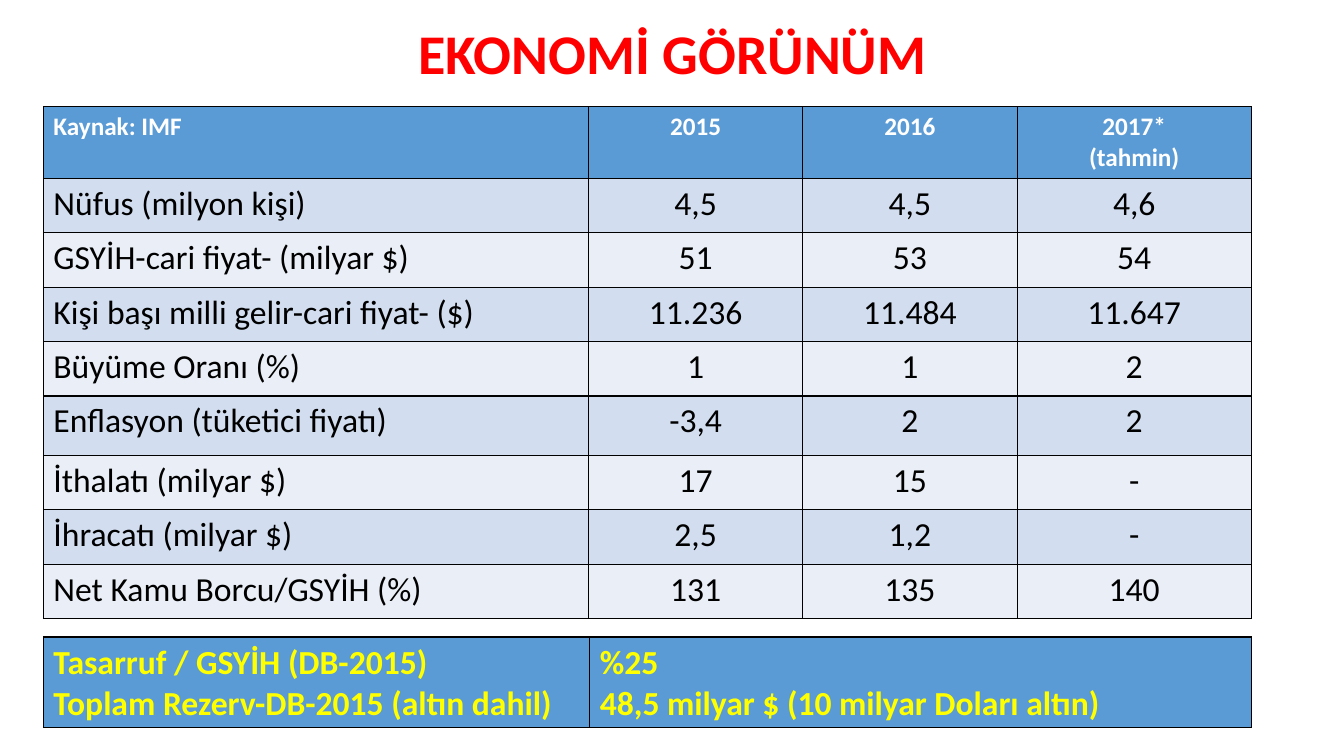
"""Builds the economic outlook slide with its indicator and reserve tables."""
from lxml.etree import SubElement
from pptx import Presentation
from pptx.dml.color import RGBColor as RGB
from pptx.enum.text import MSO_ANCHOR, PP_ALIGN
from pptx.oxml.ns import qn
from pptx.util import Inches, Pt

TITLE = "EKONOMİ GÖRÜNÜM"
INDICATORS = [
    ("Kaynak: IMF", "2015", "2016", "2017*\n(tahmin)"),
    ("Nüfus (milyon kişi)", "4,5", "4,5", "4,6"),
    ("GSYİH-cari fiyat- (milyar $)", "51", "53", "54"),
    ("Kişi başı milli gelir-cari fiyat- ($)", "11.236", "11.484", "11.647"),
    ("Büyüme Oranı (%)", "1", "1", "2"),
    ("Enflasyon (tüketici fiyatı)", "-3,4", "2", "2"),
    ("İthalatı (milyar $)", "17", "15", "-"),
    ("İhracatı (milyar $)", "2,5", "1,2", "-"),
    ("Net Kamu Borcu/GSYİH (%)", "131", "135", "140"),
]
RESERVES = [
    ("Tasarruf / GSYİH (DB-2015)\nToplam Rezerv-DB-2015 (altın dahil)",
     "%25\n48,5 milyar $ (10 milyar Doları altın)"),
]
COLORS = {"title": "FF0000", "header": "5B9BD5", "odd": "D2DEEF", "even": "EAEFF7",
          "white": "FFFFFF", "black": "000000", "yellow": "FFFF00"}
FONT = "Calibri"
LEFT = 0.43
INDICATOR_COLS = [5.41, 2.12, 2.13, 2.32]
INDICATOR_ROWS = [0.71] + [0.54] * 4 + [0.59] + [0.54] * 3
RESERVE_COLS = [5.42, 6.56]
RESERVE_ROWS = [0.9]


def color(name):
    return RGB.from_string(COLORS[name])


def style(p, size, name, bold, align):
    p.alignment = align
    p.font.name, p.font.size, p.font.bold = FONT, Pt(size), bold
    p.font.color.rgb = color(name)


def add_borders(cell):
    tcPr = cell._tc.get_or_add_tcPr()
    for i, side in enumerate(("a:lnL", "a:lnR", "a:lnT", "a:lnB")):
        ln = SubElement(tcPr, qn(side), w=str(Pt(1)))
        fill = SubElement(ln, qn("a:solidFill"))
        SubElement(fill, qn("a:srgbClr"), val=COLORS["black"])
        tcPr.remove(ln)
        tcPr.insert(i, ln)


def add_table(s, top, rows, widths, heights, look):
    frame = s.shapes.add_table(len(rows), len(widths), Inches(LEFT), Inches(top),
                               Inches(sum(widths)), Inches(sum(heights)))
    table = frame.table
    for column, width in zip(table.columns, widths):
        column.width = Inches(width)
    for r, (row, height) in enumerate(zip(rows, heights)):
        table.rows[r].height = Inches(height)
        for c, text in enumerate(row):
            fill, size, ink, bold, align = look(r, c)
            cell = table.cell(r, c)
            cell.fill.solid()
            cell.fill.fore_color.rgb = color(fill)
            cell.text = text
            for p in cell.text_frame.paragraphs:
                style(p, size, ink, bold, align)
            add_borders(cell)


def indicator_look(r, c):
    align = PP_ALIGN.CENTER if c else PP_ALIGN.LEFT
    if r == 0:
        return "header", 18, "white", True, align
    return ("odd" if r % 2 else "even"), 24, "black", False, align


def reserve_look(r, c):
    return "header", 24, "yellow", True, PP_ALIGN.LEFT


def main():
    prs = Presentation()
    prs.slide_width, prs.slide_height = Inches(13.33), Inches(7.5)
    s = prs.slides.add_slide(prs.slide_layouts[6])
    tf = s.shapes.add_textbox(Inches(0.92), Inches(0.23), Inches(11.5), Inches(0.65)).text_frame
    tf.word_wrap = True
    tf.vertical_anchor = MSO_ANCHOR.MIDDLE
    p = tf.paragraphs[0]
    p.text = TITLE
    p.line_spacing = 0.9
    style(p, 40, "title", True, PP_ALIGN.CENTER)
    add_table(s, 1.06, INDICATORS, INDICATOR_COLS, INDICATOR_ROWS, indicator_look)
    add_table(s, 6.32, RESERVES, RESERVE_COLS, RESERVE_ROWS, reserve_look)
    prs.save("out.pptx")


if __name__ == "__main__":
    main()
